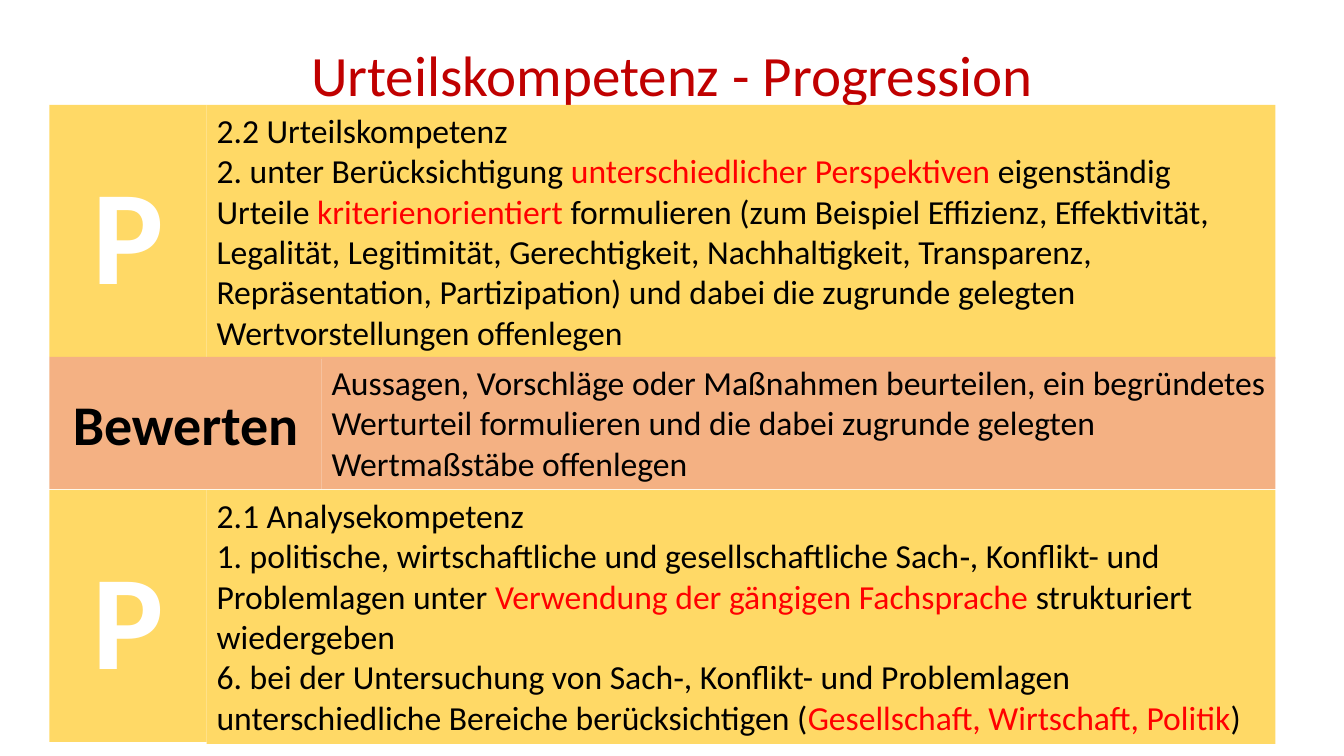
from pptx import Presentation
from pptx.dml.color import RGBColor
from pptx.enum.shapes import MSO_SHAPE
from pptx.enum.text import MSO_ANCHOR, MSO_AUTO_SIZE, PP_ALIGN
from pptx.util import Inches, Pt

RECTANGLE = MSO_SHAPE.RECTANGLE
TOP, MIDDLE = MSO_ANCHOR.TOP, MSO_ANCHOR.MIDDLE
LEFT, CENTER = PP_ALIGN.LEFT, PP_ALIGN.CENTER
NO_AUTOFIT = MSO_AUTO_SIZE.NONE
TITLE_ONLY = 5

COLORS = {
    "title": "C00000",
    "text": "000000",
    "highlight": "FF0000",
    "white": "FFFFFF",
    "yellow": "FFD966",
    "orange": "F4B183",
}
FONT = "Calibri"

TITLE = "Urteilskompetenz - Progression"

JUDGEMENT = [
    [("2.2 Urteilskompetenz", "text")],
    [
        ("2. unter Berücksichtigung ", "text"),
        ("unterschiedlicher Perspektiven", "highlight"),
        (" eigenständig Urteile ", "text"),
        ("kriterienorientiert", "highlight"),
        (" formulieren (zum Beispiel Effizienz, Effektivität, Legalität, "
         "Legitimität, Gerechtigkeit, Nachhaltigkeit, Transparenz, "
         "Repräsentation, Partizipation) und dabei die zugrunde gelegten "
         "Wertvorstellungen offenlegen", "text"),
    ],
]
EVALUATION = [
    [("Aussagen, Vorschläge oder Maßnahmen beurteilen, ein begründetes "
      "Werturteil formulieren und die dabei zugrunde gelegten "
      "Wertmaßstäbe offenlegen", "text")],
]
ANALYSIS = [
    [("2.1 Analysekompetenz", "text")],
    [
        ("1. politische, wirtschaftliche und gesellschaftliche Sach‑, "
         "Konflikt- und Problemlagen unter ", "text"),
        ("Verwendung der gängigen Fachsprache ", "highlight"),
        ("strukturiert wiedergeben", "text"),
    ],
    [
        ("6. bei der Untersuchung von Sach‑, Konflikt- und Problemlagen "
         "unterschiedliche Bereiche berücksichtigen (", "text"),
        ("Gesellschaft, Wirtschaft, Politik", "highlight"),
        (")", "text"),
    ],
]

COMPETENCE = {"fill": "yellow", "label_width": 1.56, "label_height": 2.5,
              "body_height": 2.52, "label_size": 96, "label_color": "white"}
OPERATOR = {"fill": "orange", "label_width": 2.7, "label_height": 1.31,
            "body_height": 1.31, "label_size": 40, "label_color": "text"}

BANDS = [
    ("P", JUDGEMENT, 1.04, COMPETENCE),
    ("Bewerten", EVALUATION, 3.54, OPERATOR),
    ("P", ANALYSIS, 4.86, COMPETENCE),
]
BAND_LEFT, BAND_RIGHT = 0.49, 12.65


def write_text(shape, paragraphs, size, bold=False, align=LEFT, anchor=TOP):
    frame = shape.text_frame
    frame.word_wrap = True
    frame.auto_size = NO_AUTOFIT
    frame.vertical_anchor = anchor
    for index, runs in enumerate(paragraphs):
        paragraph = frame.add_paragraph() if index else frame.paragraphs[0]
        paragraph.alignment = align
        for text, color in runs:
            run = paragraph.add_run()
            run.text = text
            run.font.name = FONT
            run.font.size = Pt(size)
            run.font.bold = bold
            run.font.color.rgb = RGBColor.from_string(COLORS[color])


def add_block(slide, left, top, width, height, fill):
    shape = slide.shapes.add_shape(
        RECTANGLE, Inches(left), Inches(top), Inches(width), Inches(height))
    shape.shadow.inherit = False
    shape.fill.solid()
    shape.fill.fore_color.rgb = RGBColor.from_string(COLORS[fill])
    shape.line.fill.background()
    return shape


def add_band(slide, label, paragraphs, top, style):
    body_left = BAND_LEFT + style["label_width"]
    body = add_block(slide, body_left, top, BAND_RIGHT - body_left,
                     style["body_height"], style["fill"])
    write_text(body, paragraphs, 24)
    label_block = add_block(slide, BAND_LEFT, top, style["label_width"],
                            style["label_height"], style["fill"])
    write_text(label_block, [[(label, style["label_color"])]],
               style["label_size"], bold=True, align=CENTER, anchor=MIDDLE)


def main():
    presentation = Presentation()
    presentation.slide_width = Inches(13.33)
    presentation.slide_height = Inches(7.5)
    slide = presentation.slides.add_slide(
        presentation.slide_layouts[TITLE_ONLY])

    title = slide.shapes.title
    title.left, title.top = Inches(0.34), Inches(0.34)
    title.width, title.height = Inches(12.65), Inches(1.96)
    write_text(title, [[(TITLE, "title")]], 40.7, align=CENTER)

    for label, paragraphs, top, style in BANDS:
        add_band(slide, label, paragraphs, top, style)

    presentation.save("out.pptx")


if __name__ == "__main__":
    main()
